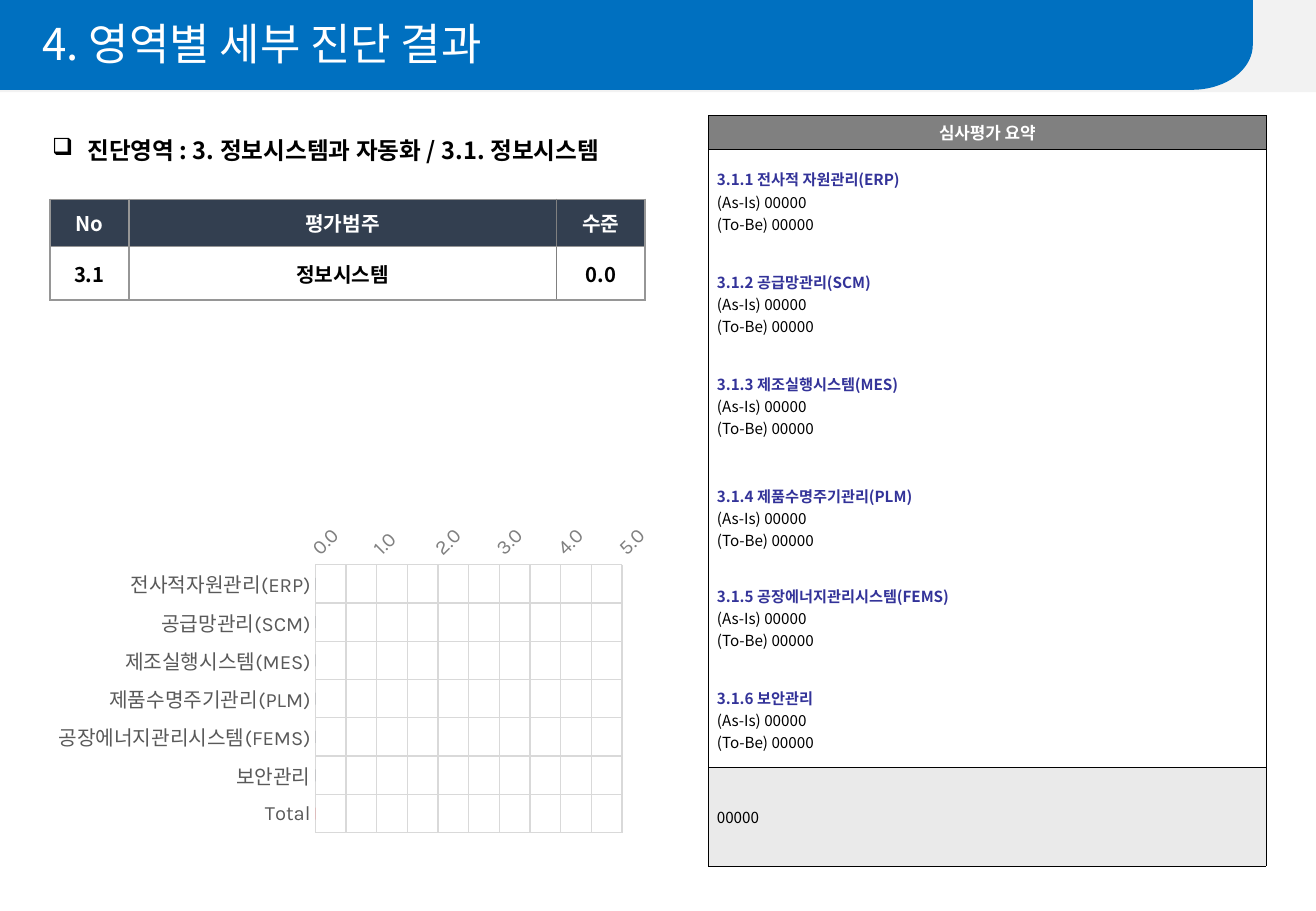
import math
from dataclasses import dataclass

import pptx
import pptx.chart.data
import pptx.dml.color
import pptx.enum.chart
import pptx.enum.shapes
import pptx.enum.text
import pptx.oxml
import pptx.oxml.ns
import pptx.util
from pptx.util import Inches

ALIGN = pptx.enum.text.PP_ALIGN
ANCHOR = pptx.enum.text.MSO_ANCHOR


@dataclass(frozen=True)
class Theme:
    font: str = "Noto Sans CJK KR"
    chart_font: str = "Karla"
    white: str = "FFFFFF"
    black: str = "000000"
    blue: str = "0070C0"
    pale: str = "F2F2F2"
    navy: str = "333F50"
    indigo: str = "333399"
    gray: str = "808080"
    border: str = "969696"
    grid: str = "D9D9D9"
    label: str = "595959"
    comment: str = "EAEAEA"
    red: str = "FF0000"
    title_size: float = 26
    heading_size: float = 14
    table_size: float = 12
    summary_size: float = 10
    body_size: float = 9


THEME = Theme()


def rgb(value):
    return pptx.dml.color.RGBColor.from_string(value)


def write(para, text, size=THEME.table_size, color=THEME.black, bold=False,
          align=ALIGN.LEFT, line=1.0, before=0):
    para.alignment = align
    para.line_spacing = line
    para.space_before = pptx.util.Pt(before)
    span = para.add_run()
    span.text = text
    span.font.size = pptx.util.Pt(size)
    span.font.bold = bold
    span.font.name = THEME.font
    span.font.color.rgb = rgb(color)
    east = span.font._element.makeelement(pptx.oxml.ns.qn("a:ea"), {"typeface": THEME.font})
    span.font._element.append(east)


def set_margins(target, left, top, right, bottom):
    target.margin_left, target.margin_top = Inches(left), Inches(top)
    target.margin_right, target.margin_bottom = Inches(right), Inches(bottom)


def paint(shape, color):
    shape.shadow.inherit = False
    shape.fill.solid()
    shape.fill.fore_color.rgb = rgb(color)
    shape.line.fill.background()


def add_banner(page, left, top, width, height):
    # Pale strip, and the blue band with its rounded lower right corner
    strip = page.shapes.add_shape(pptx.enum.shapes.MSO_SHAPE.RECTANGLE, Inches(left),
                                  Inches(top), Inches(width), Inches(height))
    paint(strip, THEME.pale)
    right, bottom = left + width - 0.52, top + height - 0.02
    radius_x, radius_y = 0.5, 0.37
    angles = [math.radians(step * 5) for step in range(19)]
    corner = [(right - radius_x * (1 - math.cos(angle)),
               bottom - radius_y * (1 - math.sin(angle))) for angle in angles]
    builder = page.shapes.build_freeform(Inches(left), Inches(top))
    outline = [(right, top), *corner, (left, bottom)]
    builder.add_line_segments([(Inches(x), Inches(y)) for x, y in outline], close=True)
    paint(builder.convert_to_shape(), THEME.blue)

    # Title, raised above the band
    title = page.shapes.title
    title.left, title.top = Inches(left), Inches(top)
    title.width, title.height = Inches(width), Inches(height)
    page.shapes._spTree.append(title._element)
    frame = title.text_frame
    frame.auto_size = pptx.enum.text.MSO_AUTO_SIZE.NONE
    frame.vertical_anchor = ANCHOR.MIDDLE
    set_margins(frame, 0.35, 0, 0, 0)
    write(frame.paragraphs[0], "4. 영역별 세부 진단 결과", size=THEME.title_size,
          color=THEME.white, line=0.9)


def add_heading(page, left, top, width, height):
    box = page.shapes.add_textbox(Inches(left), Inches(top), Inches(width), Inches(height))
    frame = box.text_frame
    frame.word_wrap = False
    frame.auto_size = pptx.enum.text.MSO_AUTO_SIZE.SHAPE_TO_FIT_TEXT
    para = frame.paragraphs[0]
    write(para, "진단영역 : 3. 정보시스템과 자동화 / 3.1. 정보시스템",
          size=THEME.heading_size, bold=True)
    props = para._p.get_or_add_pPr()
    props.set("marL", str(Inches(0.29)))
    props.set("indent", str(-Inches(0.29)))
    bullet = props.makeelement(pptx.oxml.ns.qn("a:buChar"), {"char": "❑"})
    props.append(bullet)


def add_grid(page, left, top, columns, rows):
    frame = page.shapes.add_table(len(rows), len(columns), Inches(left), Inches(top),
                                  Inches(sum(columns)), Inches(sum(rows)))
    table = frame.table
    table.first_row = table.horz_banding = False
    for column, width in zip(table.columns, columns):
        column.width = Inches(width)
    for row, height in zip(table.rows, rows):
        row.height = Inches(height)
    return table


def style_cell(cell, margins, width, color, fill=None, **sides):
    cell.vertical_anchor = ANCHOR.MIDDLE
    set_margins(cell, *margins)
    props = cell._tc.get_or_add_tcPr()
    for side in "LRTB":
        props.append(pptx.oxml.parse_xml(
            f'<a:ln{side} {pptx.oxml.ns.nsdecls("a")} w="{pptx.util.Pt(width)}"><a:solidFill>'
            f'<a:srgbClr val="{sides.get(side, color)}"/></a:solidFill></a:ln{side}>'))
    if fill:
        cell.fill.solid()
        cell.fill.fore_color.rgb = rgb(fill)
    else:
        cell.fill.background()


def add_level_table(page, left, top):
    rows = [("No", "평가범주", "수준"), ("3.1", "정보시스템", "0.0")]
    table = add_grid(page, left, top, [0.65, 3.52, 0.73], [0.39, 0.44])
    styles = [(THEME.navy, THEME.white), (None, THEME.black)]
    inner_sides = [{}, {"R": THEME.gray}, {"L": THEME.gray}]
    for r, (texts, (fill, color)) in enumerate(zip(rows, styles)):
        for c, (text, sides) in enumerate(zip(texts, inner_sides)):
            cell = table.cell(r, c)
            style_cell(cell, (0.08, 0.04, 0.08, 0.04), 1, THEME.border, fill, **sides)
            write(cell.text_frame.paragraphs[0], text, color=color, bold=True,
                  align=ALIGN.CENTER)


def add_summary(page, left, top):
    # Each topic with the gap above it in points
    topics = [("3.1.1 전사적 자원관리(ERP)", 0), ("3.1.2 공급망관리(SCM)", 18.7),
              ("3.1.3 제조실행시스템(MES)", 18.7), ("3.1.4 제품수명주기관리(PLM)", 24.7),
              ("3.1.5 공장에너지관리시스템(FEMS)", 17.5), ("3.1.6 보안관리", 18.7)]
    table = add_grid(page, left, top, [4.59], [0.28, 5.09, 0.81])
    header, body, comment = [table.cell(row, 0) for row in range(3)]
    for cell, fill in ((header, THEME.gray), (body, None), (comment, THEME.comment)):
        style_cell(cell, (0.07, 0.02, 0.07, 0.02), 0.28, THEME.black, fill)
    write(header.text_frame.paragraphs[0], "심사평가 요약", size=THEME.summary_size,
          color=THEME.white, bold=True, align=ALIGN.CENTER)
    frame = body.text_frame
    for index, (topic, gap) in enumerate(topics):
        para = frame.add_paragraph() if index else frame.paragraphs[0]
        write(para, topic, size=THEME.body_size, color=THEME.indigo, bold=True,
              line=1.2, before=gap)
        for state in ("As-Is", "To-Be"):
            write(frame.add_paragraph(), f"({state}) 00000", size=THEME.body_size)
    write(comment.text_frame.paragraphs[0], "00000", size=THEME.body_size)


def style_axis(axis, color):
    axis.has_major_gridlines = True
    axis.major_gridlines.format.line.color.rgb = rgb(THEME.grid)
    axis.major_gridlines.format.line.width = pptx.util.Pt(0.75)
    axis.major_tick_mark = axis.minor_tick_mark = pptx.enum.chart.XL_TICK_MARK.NONE
    font = axis.tick_labels.font
    font.size, font.name = pptx.util.Pt(THEME.table_size), THEME.chart_font
    font.color.rgb = rgb(color)


def add_level_chart(page, left, top, width, height):
    data = pptx.chart.data.CategoryChartData()
    data.categories = ["전사적자원관리(ERP)", "공급망관리(SCM)", "제조실행시스템(MES)",
                       "제품수명주기관리(PLM)", "공장에너지관리시스템(FEMS)", "보안관리", "Total"]
    data.add_series("Series 1", [0] * 7)
    chart = page.shapes.add_chart(pptx.enum.chart.XL_CHART_TYPE.BAR_CLUSTERED, Inches(left),
                                  Inches(top), Inches(width), Inches(height), data).chart
    chart.has_legend = chart.has_title = False
    chart.font.size, chart.font.name = pptx.util.Pt(10), THEME.chart_font
    chart.font.color.rgb = rgb(THEME.black)

    # Bars, with the total in red
    plot = chart.plots[0]
    plot.gap_width, plot.vary_by_categories = 219, False
    bars = plot.series[0]
    for target, color in ((bars, THEME.navy), (bars.points[6], THEME.red)):
        target.format.fill.solid()
        target.format.fill.fore_color.rgb = rgb(color)

    # Axes, with slanted values along the top
    names, levels = chart.category_axis, chart.value_axis
    style_axis(names, THEME.label)
    names.reverse_order = True
    names.format.line.color.rgb = rgb(THEME.grid)
    names.format.line.width = pptx.util.Pt(0.75)
    style_axis(levels, THEME.gray)
    levels.format.line.fill.background()
    levels.minimum_scale, levels.maximum_scale, levels.major_unit = 0, 5, 0.5
    levels.tick_labels.number_format = "0.0_ "
    levels.tick_labels.number_format_is_linked = False
    levels._element.find(".//" + pptx.oxml.ns.qn("a:bodyPr")).set("rot", "-2700000")

    # Fixed inner plot area
    area = chart._chartSpace.chart.plotArea
    for old in area.findall(pptx.oxml.ns.qn("c:layout")):
        area.remove(old)
    sizes = "".join(f'<c:{key} val="{value}"/>' for key, value in
                    (("x", 0.44), ("y", 0.16), ("w", 0.49), ("h", 0.82)))
    area.insert(0, pptx.oxml.parse_xml(
        f'<c:layout {pptx.oxml.ns.nsdecls("c")}><c:manualLayout><c:layoutTarget val="inner"/>'
        f'<c:xMode val="edge"/><c:yMode val="edge"/>{sizes}</c:manualLayout></c:layout>'))


def main():
    deck = pptx.Presentation()
    deck.slide_width, deck.slide_height = Inches(10.83), Inches(7.5)
    page = deck.slides.add_slide(deck.slide_layouts[5])
    add_banner(page, 0, 0, 10.83, 0.76)
    add_heading(page, 0.33, 1.07, 5.15, 0.34)
    add_level_table(page, 0.41, 1.64)
    add_summary(page, 5.83, 0.95)
    add_level_chart(page, 0.33, 4.22, 5.15, 2.69)
    deck.save("out.pptx")


if __name__ == "__main__":
    main()
